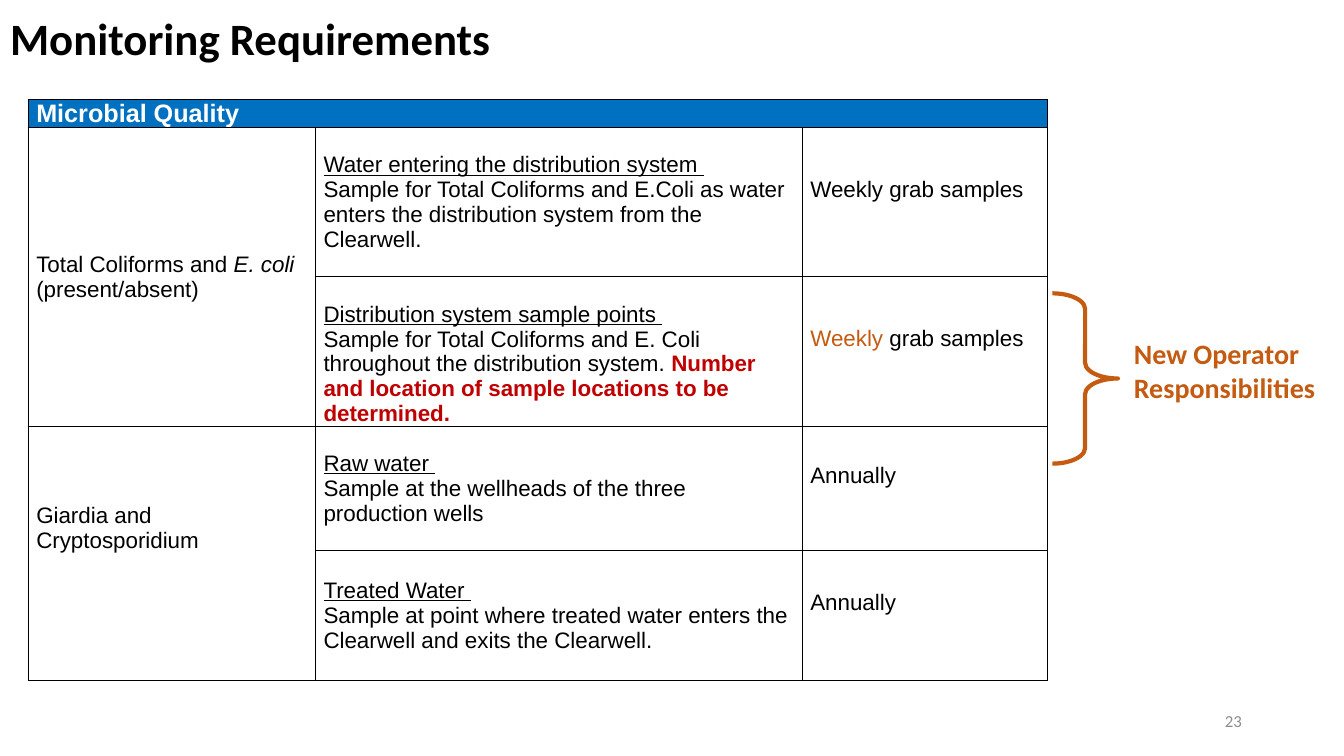
from lxml import etree
from pptx import Presentation
from pptx import util as u
from pptx.dml.color import RGBColor
from pptx.enum import shapes, text
from pptx.oxml import ns

BLACK, WHITE, BLUE = "000000", "FFFFFF", "0070C0"
ORANGE, RED, GREY = "C55A11", "C00000", "8C8C8C"
COLUMNS, ROWS = 160, 90
LINE_GAP = 0.25  # inches, one line of table text


def rgb(value):
    return RGBColor.from_string(value)


def write(frame, paragraphs, size=16, font="Arial", color=BLACK, bold=False,
          align=text.PP_ALIGN.LEFT, spacing=None):
    """Each paragraph is a list of runs; each run is text plus its own format."""
    for index, runs in enumerate(paragraphs):
        paragraph = frame.add_paragraph() if index else frame.paragraphs[0]
        paragraph.alignment = align
        if spacing:
            paragraph.line_spacing = spacing
        for words, own in runs:
            run = paragraph.add_run()
            run.text = words
            run.font.name, run.font.size = font, u.Pt(size)
            run.font.bold = own.get("bold", bold)
            run.font.italic = own.get("italic", False)
            run.font.underline = own.get("underline", False)
            run.font.color.rgb = rgb(own.get("color", color))


def plain(*lines):
    return [[(line, {})] for line in lines]


def sample(heading, *details):
    return [[(heading + " ", {"underline": True})], list(details)]


class Deck:
    def __init__(self):
        self.prs = Presentation()
        self.prs.slide_width, self.prs.slide_height = u.Inches(13.333), u.Inches(7.5)
        self.slide = self.prs.slides.add_slide(self.prs.slide_layouts[5])

    def x(self, columns):
        return round(self.prs.slide_width * columns / COLUMNS)

    def y(self, rows):
        return round(self.prs.slide_height * rows / ROWS)

    def box(self, left, top, width, height):
        return self.x(left), self.y(top), self.x(width), self.y(height)

    def title(self, words, *place):
        heading = self.slide.shapes.title
        heading.left, heading.top, heading.width, heading.height = self.box(*place)
        heading.text_frame.auto_size = text.MSO_AUTO_SIZE.NONE
        heading.text_frame.vertical_anchor = text.MSO_ANCHOR.MIDDLE
        write(heading.text_frame, plain(words), size=32, font="Calibri",
              bold=True, spacing=0.9)

    def label(self, lines, *place, wrap=True, anchor=text.MSO_ANCHOR.TOP, **style):
        frame = self.slide.shapes.add_textbox(*self.box(*place)).text_frame
        frame.word_wrap = wrap
        frame.vertical_anchor = anchor
        write(frame, plain(*lines), font="Calibri", **style)

    def brace(self, *place):
        brace = self.slide.shapes.add_shape(
            shapes.MSO_SHAPE.RIGHT_BRACE, *self.box(*place))
        brace.adjustments[0], brace.adjustments[1] = 0.24, 0.5
        brace.fill.background()
        brace.line.color.rgb, brace.line.width = rgb(ORANGE), u.Pt(3)
        brace.shadow.inherit = False

    def table(self, left, top, widths, heights):
        place = self.box(left, top, sum(widths), sum(heights))
        table = self.slide.shapes.add_table(len(heights), len(widths), *place).table
        table.first_row = table.horz_banding = False
        for column, width in zip(table.columns, widths):
            column.width = self.x(width)
        for row, height in zip(table.rows, heights):
            row.height = self.y(height)
        for cell in table.iter_cells():
            self.border(cell)
            cell.fill.background()
            cell.vertical_anchor = text.MSO_ANCHOR.MIDDLE
            cell.margin_left = cell.margin_right = u.Inches(0.08)
            cell.margin_top = cell.margin_bottom = 0
        return table

    def border(self, cell):
        properties = cell._tc.get_or_add_tcPr()
        for side in ("a:lnL", "a:lnR", "a:lnT", "a:lnB"):
            line = etree.SubElement(properties, ns.qn(side), w=str(u.Pt(1)))
            fill = etree.SubElement(line, ns.qn("a:solidFill"))
            etree.SubElement(fill, ns.qn("a:srgbClr"), val=BLACK)


def main():
    deck = Deck()
    deck.title("Monitoring Requirements", 0, 0, 138, 9.84)

    # Monitoring table: header band, then two groups of two samples
    monitoring = deck.table(3.36, 11.83, (34.2, 57.96, 29.16),
                            (3.36, 17.76, 17.76, 14.76, 15.48))
    header = monitoring.cell(0, 0)
    header.merge(monitoring.cell(0, 2))
    header.fill.solid()
    header.fill.fore_color.rgb = rgb(BLUE)
    write(header.text_frame, plain("Microbial Quality"), size=18, color=WHITE, bold=True)

    # Organism groups
    organisms = {
        1: [[("Total Coliforms and ", {}), ("E. coli", {"italic": True}),
             (" (present/absent)", {})]],
        3: plain("Giardia and Cryptosporidium"),
    }
    for row, organism in organisms.items():
        group = monitoring.cell(row, 0)
        group.merge(monitoring.cell(row + 1, 0))
        write(group.text_frame, organism)
    monitoring.cell(3, 0).margin_bottom = u.Inches(2 * LINE_GAP)

    # Sampling points and their frequency
    samples = [
        (sample("Water entering the distribution system",
                ("Sample for Total Coliforms and E.Coli as water enters the "
                 "distribution system from the Clearwell.", {})),
         plain("Weekly grab samples")),
        (sample("Distribution system sample points",
                ("Sample for Total Coliforms and E. Coli throughout the "
                 "distribution system. ", {}),
                ("Number and location of sample locations to be determined.",
                 {"color": RED, "bold": True})),
         [[("Weekly", {"color": ORANGE}), (" grab samples", {})]]),
        (sample("Raw water",
                ("Sample at the wellheads of the three production wells", {})),
         plain("Annually")),
        (sample("Treated Water",
                ("Sample at point where treated water enters the Clearwell "
                 "and exits the Clearwell.", {})),
         plain("Annually")),
    ]
    for row, (point, frequency) in enumerate(samples, start=1):
        write(monitoring.cell(row, 1).text_frame, point)
        write(monitoring.cell(row, 2).text_frame, frequency)
        monitoring.cell(row, 2).margin_bottom = u.Inches(LINE_GAP)
    monitoring.cell(2, 1).margin_top = u.Inches(LINE_GAP)

    # Page number
    deck.label(["23"], 113.04, 83.4, 36, 4.8, size=12, color=GREY,
               align=text.PP_ALIGN.RIGHT, anchor=text.MSO_ANCHOR.MIDDLE)

    # Operator callout
    deck.brace(125.28, 34.92, 7.8, 20.28)
    deck.label(["New Operator", "Responsibilities"], 133.8, 39.48, 24.24, 9.24,
               wrap=False, size=20, color=ORANGE, bold=True)

    deck.prs.save("out.pptx")


if __name__ == "__main__":
    main()
